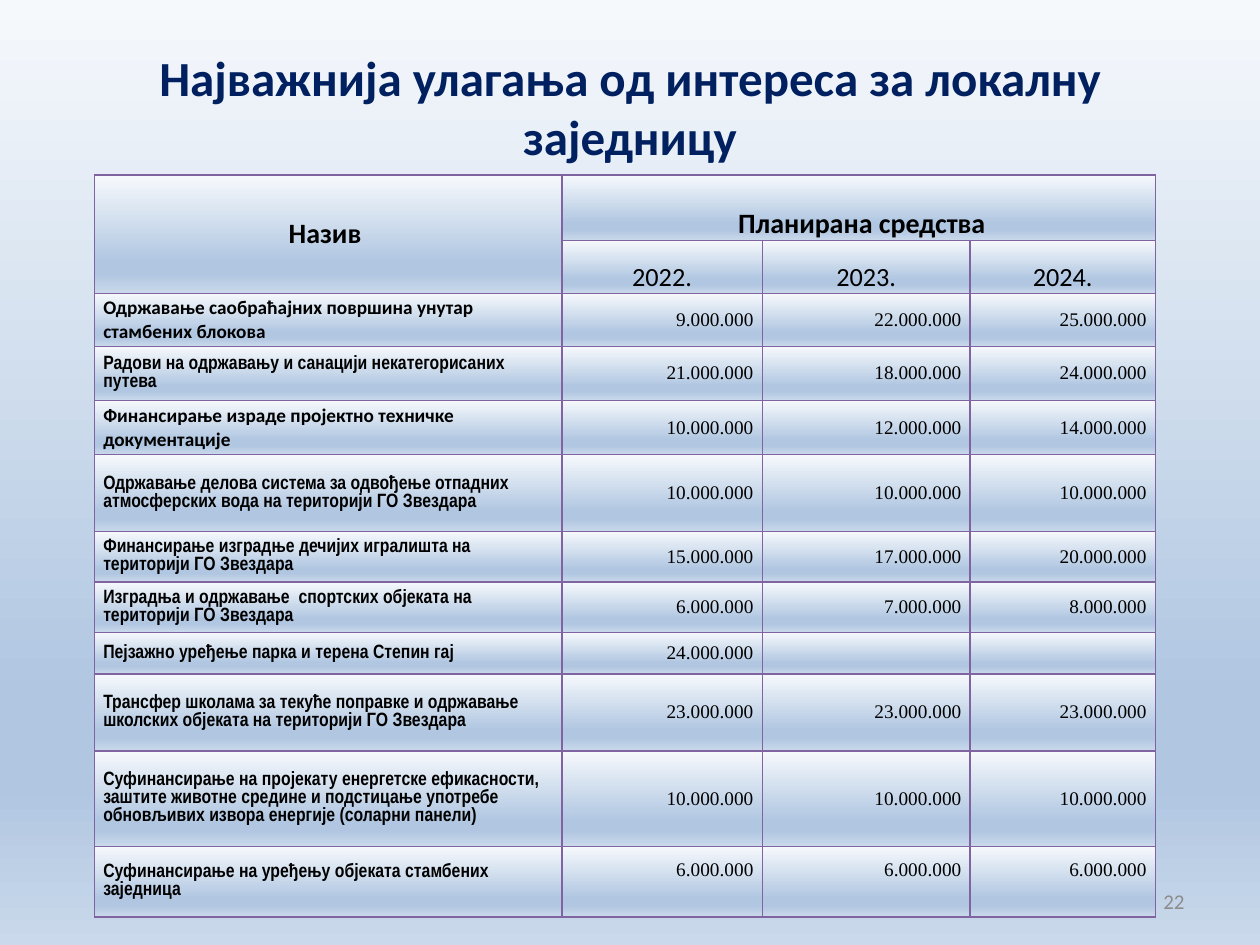
from lxml import etree
from pptx import Presentation
from pptx import util as u
from pptx.dml.color import RGBColor
from pptx.enum import text
from pptx.oxml import ns

COLORS = {"title": "002060", "body": "000000", "border": "8064A2", "number": "8C8C8C"}
GRADIENT = [(0, "F6F9FC"), (74, "B0C6E1"), (83, "B0C6E1"), (100, "CAD9EB")]
COLUMNS = [3.71, 1.59, 1.65, 1.47]
ROWS = [0.52, 0.42, 0.42, 0.43, 0.43, 0.61, 0.4, 0.4, 0.33, 0.61, 0.76, 0.56]
YEARS = ["2022.", "2023.", "2024."]
WIDE, NARROW, SERIF = "Calibri", "Arial Narrow", "Times New Roman"
INVESTMENTS = [
    ("Одржавање caoбраћајних површина унутар стамбених блокова", WIDE,
     ["9.000.000", "22.000.000", "25.000.000"]),
    ("Радови на одржавању и санацији некатегорисаних путева", NARROW,
     ["21.000.000", "18.000.000", "24.000.000"]),
    ("Финансирање израде пројектно техничке документације", WIDE,
     ["10.000.000", "12.000.000", "14.000.000"]),
    ("Одржавање делова система за одвођење отпадних атмосферских вода на територији ГО Звездара",
     NARROW, ["10.000.000"] * 3),
    ("Финансирање изградње дечијих игралишта на територији ГО Звездара", NARROW,
     ["15.000.000", "17.000.000", "20.000.000"]),
    ("Изградња и одржавање  спортских објеката на територији ГО Звездара", NARROW,
     ["6.000.000", "7.000.000", "8.000.000"]),
    ("Пејзажно уређење парка и терена Степин гај", NARROW, ["24.000.000", "", ""]),
    ("Трансфер школама за текуће поправке и одржавање школских објеката на територији ГО Звездара",
     NARROW, ["23.000.000"] * 3),
    ("Суфинансирање на пројекату енергетске ефикасности, заштите животне средине и подстицање "
     "употребе обновљивих извора енергије (соларни панели)", NARROW, ["10.000.000"] * 3),
    ("Суфинансирање на уређењу објеката стамбених заједница", NARROW, ["6.000.000"] * 3),
]
LEFT, CENTER, RIGHT = text.PP_ALIGN.LEFT, text.PP_ALIGN.CENTER, text.PP_ALIGN.RIGHT
MIDDLE, BOTTOM = text.MSO_ANCHOR.MIDDLE, text.MSO_ANCHOR.BOTTOM


def write(tf, words, size, font, color, align, bold=False):
    p = tf.paragraphs[0]
    p.alignment = align
    p.font.size, p.font.name, p.font.bold = u.Pt(size), font, bold
    p.font.color.rgb = RGBColor.from_string(COLORS[color])
    if words:
        p.add_run().text = words


def paint_gradient(fill, element):
    fill.gradient()
    fill.gradient_angle = 270
    stops = next(element.iter(ns.qn("a:gsLst")))
    for stop in list(stops):
        stops.remove(stop)
    for pos, color in GRADIENT:
        gs = etree.SubElement(stops, ns.qn("a:gs"), pos=str(pos * 1000))
        etree.SubElement(gs, ns.qn("a:srgbClr"), val=color)


def draw_borders(cell):
    tc_pr = cell._tc.get_or_add_tcPr()
    for i, side in enumerate(("lnL", "lnR", "lnT", "lnB")):
        ln = etree.Element(ns.qn(f"a:{side}"), w=str(u.Pt(1)))
        solid = etree.SubElement(ln, ns.qn("a:solidFill"))
        etree.SubElement(solid, ns.qn("a:srgbClr"), val=COLORS["border"])
        tc_pr.insert(i, ln)


def fill_cell(cell, words, size, font, align, bold=False, anchor=MIDDLE):
    cell.vertical_anchor = anchor
    write(cell.text_frame, words, size, font, "body", align, bold)


def add_title(slide, x, y, w, h):
    title = slide.shapes.title
    title.left, title.top, title.width, title.height = map(u.Inches, (x, y, w, h))
    title.text_frame.vertical_anchor = MIDDLE
    write(title.text_frame, "Најважнија улагања од интереса за локалну заједницу",
          28, WIDE, "title", CENTER, True)


def add_investments(slide, x, y, w, h):
    table = slide.shapes.add_table(len(ROWS), len(COLUMNS), *map(u.Inches, (x, y, w, h))).table
    table.first_row = table.horz_banding = False
    for column, width in zip(table.columns, COLUMNS):
        column.width = u.Inches(width)
    for row, height in zip(table.rows, ROWS):
        row.height = u.Inches(height)
    for cell in table.iter_cells():
        cell.margin_left = cell.margin_right = u.Inches(0.07)
        cell.margin_top = cell.margin_bottom = 0
        paint_gradient(cell.fill, cell._tc)
        draw_borders(cell)

    table.cell(0, 0).merge(table.cell(1, 0))
    table.cell(0, 1).merge(table.cell(0, 3))
    fill_cell(table.cell(0, 0), "Назив ", 16, WIDE, CENTER, True)
    fill_cell(table.cell(0, 1), " Планирана средства", 16, WIDE, CENTER, True, BOTTOM)
    for c, year in enumerate(YEARS, 1):
        fill_cell(table.cell(1, c), year, 15, WIDE, CENTER, anchor=BOTTOM)
    for r, (name, font, amounts) in enumerate(INVESTMENTS, 2):
        fill_cell(table.cell(r, 0), name, 11, font, LEFT, True)
        for c, amount in enumerate(amounts, 1):
            fill_cell(table.cell(r, c), amount, 11, SERIF, RIGHT)
    for c in range(1, len(COLUMNS)):
        table.cell(len(ROWS) - 1, c).margin_bottom = u.Inches(0.18)


def add_page_number(slide, x, y, w, h):
    tf = slide.shapes.add_textbox(*map(u.Inches, (x, y, w, h))).text_frame
    tf.word_wrap = True
    tf.vertical_anchor = MIDDLE
    write(tf, "22", 12, WIDE, "number", RIGHT)


def main():
    prs = Presentation()
    prs.slide_width, prs.slide_height = u.Inches(10), u.Inches(7.5)
    s = prs.slides.add_slide(prs.slide_layouts[5])
    paint_gradient(s.background.fill, s.element)
    add_title(s, 0.5, 0.3, 9, 1.09)
    add_investments(s, 0.75, 1.39, sum(COLUMNS), sum(ROWS))
    add_page_number(s, 7.17, 6.95, 2.33, 0.4)
    prs.save("out.pptx")


if __name__ == "__main__":
    main()
